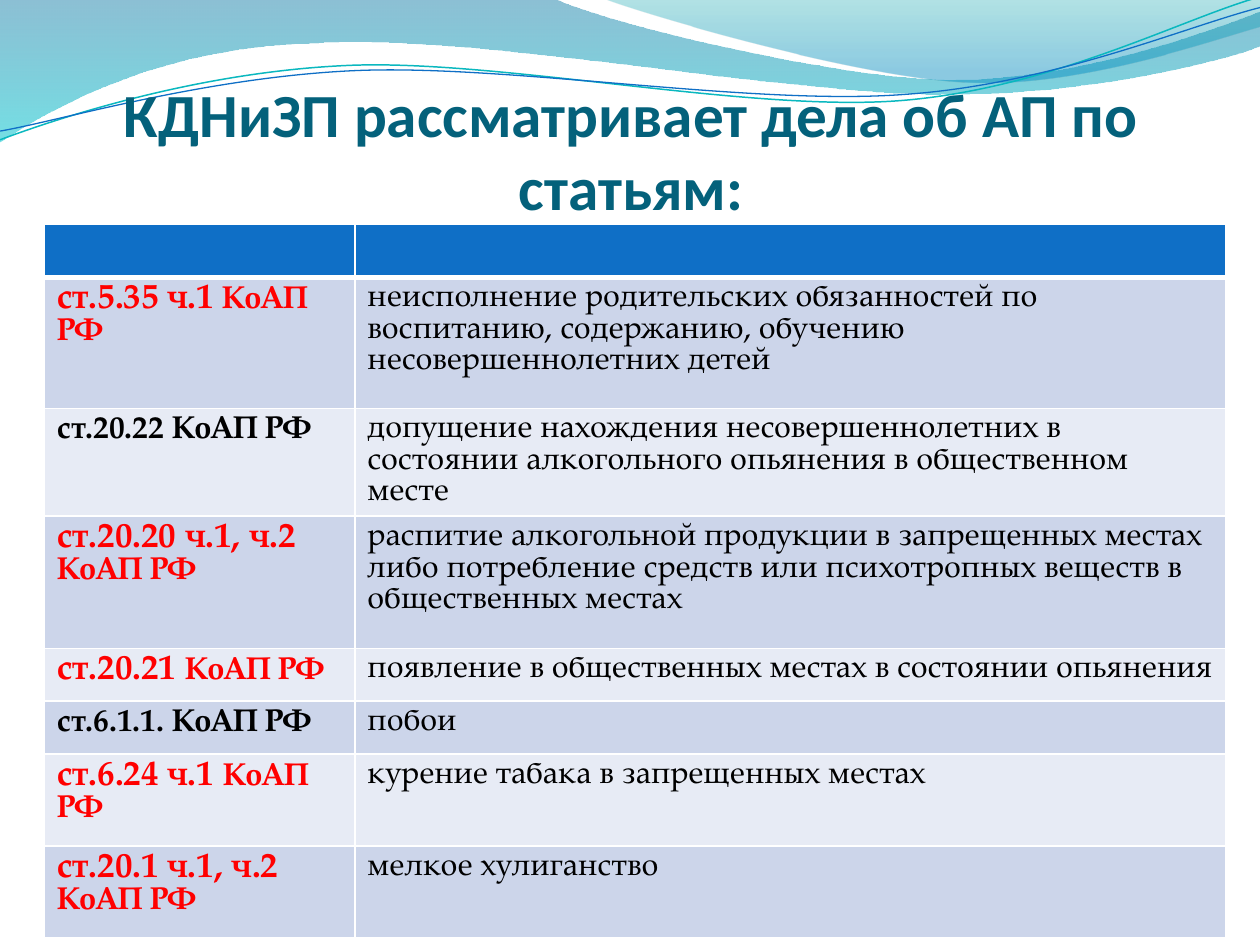
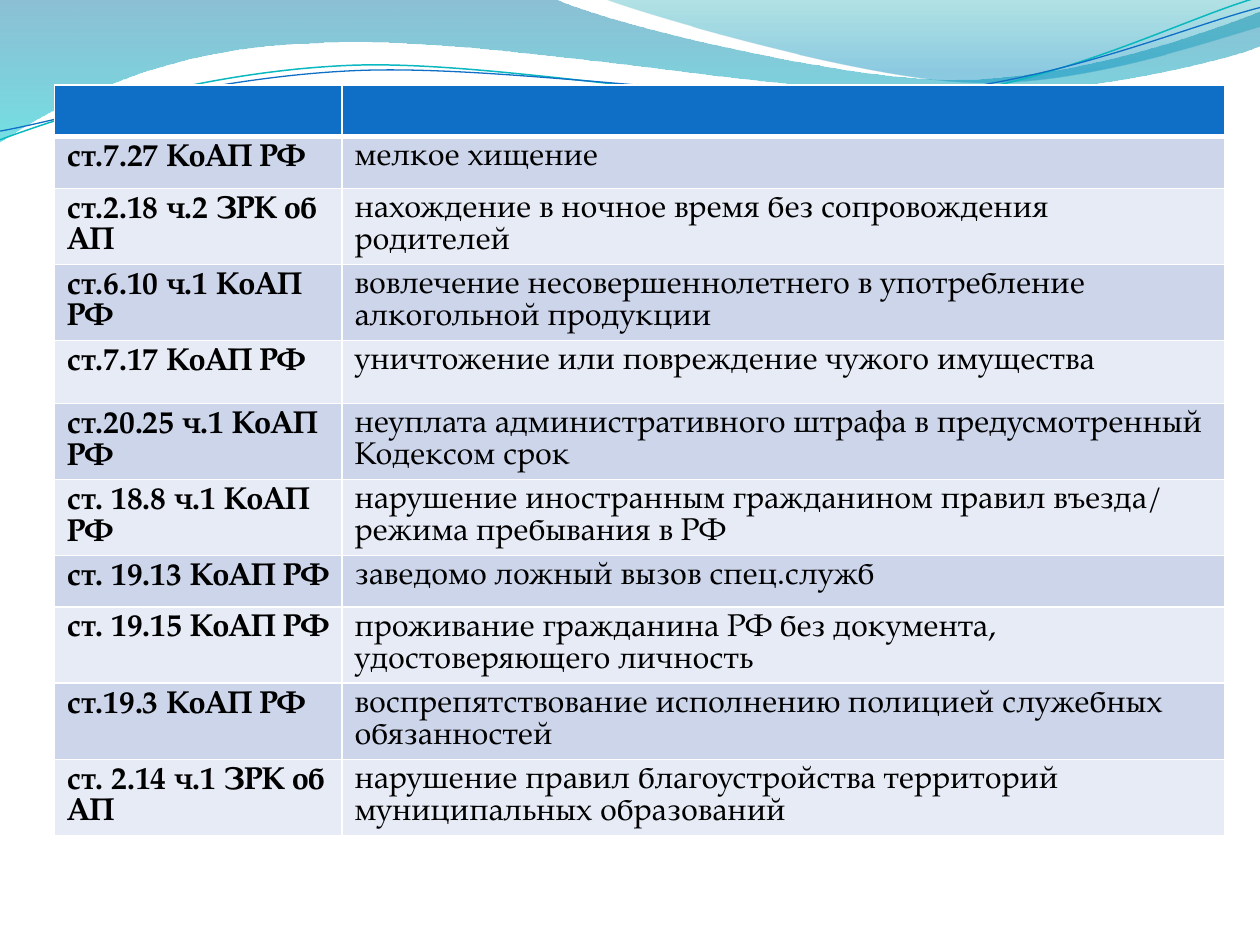
from dataclasses import dataclass

from lxml.etree import SubElement
from pptx import Presentation
from pptx.dml.color import RGBColor as Rgb
from pptx.enum.text import MSO_ANCHOR as Anchor, PP_ALIGN as Align
from pptx.oxml.ns import qn
from pptx.util import Pt


@dataclass(frozen=True)
class Theme:
    title_font: str = "Calibri"
    body_font: str = "TeX Gyre Pagella"
    title_size: float = 35
    body_size: float = 18
    body_leading: float = 18.1
    accent_size: float = 20
    title: str = "04617B"
    text: str = "000000"
    accent: str = "FF0000"
    header: str = "0F6FC6"
    bands: tuple = ("CCD5EA", "E7EBF5")
    border: str = "FFFFFF"


THEME = Theme()

# Outlines in points: a pair is a straight step, six numbers a Bezier curve
WIDE_WAVE = [
    (0, 0), (316.8, -0.7),
    (342.7, 12.2, 478.1, 45.4, 545.8, 45.4),
    (614.2, 45.4, 689.8, 18.7, 720, 6.5),
    (720.7, 25.9),
    (709.2, 31.7, 626.4, 54.7, 537.1, 54),
    (447.8, 54, 275, 20.2, 185, 24.5),
    (92.9, 25.9, 33.1, 59.8, -0.7, 81.4),
]
RIGHT_WAVE = [
    (344.9, -0.7),
    (366.5, 7.9, 491, 44.6, 553.7, 46.8),
    (616.3, 49.7, 691.9, 23, 720, 15.1),
    (720, 0),
]
TEAL_LINE = [
    (0, 79.9),
    (34.6, 67, 113.8, 41, 199.4, 37.4),
    (284.4, 33.8, 427, 64.1, 513.4, 57.6),
    (599.8, 51.1, 675.4, 10.8, 718.6, -1.4),
]
BLUE_LINE = [
    (0, 74.9),
    (33.8, 69.1, 118.1, 43.9, 203.8, 40.3),
    (290.2, 36.7, 429.8, 60.5, 516.2, 54),
    (601.9, 48.2, 677.5, 15.1, 720, 4.3),
]
# Each gradient stop: position, colour, opacity in percent
WAVES = [
    (WIDE_WAVE, [(0, "0074A1", 45), (1, "00C6CF", 55)]),
    (RIGHT_WAVE, [(0, "00A1A9", 30), (0.8, "008BBF", 45)]),
]
WAVE_LINES = [(TEAL_LINE, "0AB8BF", 0.85), (BLUE_LINE, "0F6FC6", 0.75)]

# Rows: height, article, offence; an article in two parts is highlighted
COURT_ROWS = [
    (74.9, ("ст.5.35 ч.1", " КоАП РФ"),
     "неисполнение родительских обязанностей по воспитанию, содержанию, "
     "обучению несовершеннолетних детей"),
    (52.6, ("ст.20.22 КоАП РФ",),
     "допущение нахождения несовершеннолетних в состоянии алкогольного "
     "опьянения в общественном месте"),
    (75.6, ("ст.20.20 ч.1, ч.2 ", "КоАП РФ"),
     "распитие алкогольной продукции в запрещенных местах либо потребление "
     "средств или психотропных веществ в общественных местах"),
    (30.2, ("ст.20.21 ", "КоАП РФ"),
     "появление в общественных местах в состоянии опьянения"),
    (30.2, ("ст.6.1.1. КоАП РФ",), "побои"),
    (52.6, ("ст.6.24 ч.1 ", "КоАП РФ"), "курение табака в запрещенных местах"),
    (52.6, ("ст.20.1 ч.1, ч.2 ", "КоАП РФ"), "мелкое хулиганство"),
]
MORE_ROWS = [
    (29.5, ("ст.7.27 КоАП РФ",), "мелкое хищение"),
    (29.5, ("ст.2.18 ч.2 ЗРК об АП",),
     "нахождение в ночное время без сопровождения родителей"),
    (29.5, ("ст.6.10 ч.1 КоАП РФ",),
     "вовлечение несовершеннолетнего в употребление алкогольной продукции"),
    (36, ("ст.7.17 КоАП РФ",), "уничтожение или повреждение чужого имущества"),
    (41, ("ст.20.25 ч.1 КоАП РФ",),
     "неуплата административного штрафа в предусмотренный Кодексом срок"),
    (29.5, ("ст. 18.8 ч.1 КоАП РФ",),
     "нарушение иностранным гражданином правил въезда/ режима пребывания в РФ"),
    (29.5, ("ст. 19.13 КоАП РФ",), "заведомо ложный вызов спец.служб"),
    (33.8, ("ст. 19.15 КоАП РФ",),
     "проживание гражданина РФ без документа, удостоверяющего личность"),
    (29.5, ("ст.19.3 КоАП РФ",),
     "воспрепятствование исполнению полицией служебных обязанностей"),
    (29.5, ("ст. 2.14 ч.1 ЗРК об АП",),
     "нарушение правил благоустройства территорий муниципальных образований"),
]


def bend(shape, outline):
    """Merge each three straight steps that stand for a curve into a Bezier."""
    steps = iter(list(shape.element.iter(qn("a:lnTo"))))
    for part in outline[1:]:
        step = next(steps)
        if len(part) == 6:
            step.tag = qn("a:cubicBezTo")
            for _ in range(2):
                extra = next(steps)
                step.append(extra[0])
                extra.getparent().remove(extra)


def add_outline(page, outline, close):
    start, *others = [(Pt(part[i]), Pt(part[i + 1]))
                      for part in outline for i in range(0, len(part), 2)]
    builder = page.shapes.build_freeform(*start)
    builder.add_line_segments(others, close=close)
    shape = builder.convert_to_shape()
    shape.shadow.inherit = False
    bend(shape, outline)
    return shape


def add_wave(page, outline, stops):
    wave = add_outline(page, outline, close=True)
    wave.line.fill.background()
    wave.fill.gradient()
    wave.fill.gradient_angle = 270
    for stop, (position, colour, _) in zip(wave.fill.gradient_stops, stops):
        stop.position = position
        stop.color.rgb = Rgb.from_string(colour)
    for colour_node, (_, _, opacity) in zip(wave.element.iter(qn("a:srgbClr")), stops):
        SubElement(colour_node, qn("a:alpha"), val=str(opacity * 1000))


def add_wave_line(page, outline, colour, width):
    curve = add_outline(page, outline, close=False)
    curve.fill.background()
    curve.line.color.rgb = Rgb.from_string(colour)
    curve.line.width = Pt(width)


def style(span, font, size, colour, bold):
    span.font.name = font
    span.font.size = Pt(size)
    span.font.color.rgb = Rgb.from_string(colour)
    span.font.bold = bold


def add_title(page, text):
    box = page.shapes.add_textbox(Pt(36.7), Pt(60.5), Pt(648), Pt(67))
    frame = box.text_frame
    frame.word_wrap = True
    frame.vertical_anchor = Anchor.BOTTOM
    frame.margin_left = frame.margin_right = frame.margin_bottom = 0
    frame.text = text
    para = frame.paragraphs[0]
    para.alignment = Align.CENTER
    style(para.runs[0], THEME.title_font, THEME.title_size, THEME.title, True)


def set_borders(cell, top, bottom):
    properties = cell._tc.get_or_add_tcPr()
    for place, (side, width) in enumerate(zip("LRTB", (1, 1, top, bottom))):
        line = SubElement(properties, qn(f"a:ln{side}"), w=str(Pt(width)))
        fill = SubElement(line, qn("a:solidFill"))
        SubElement(fill, qn("a:srgbClr"), val=THEME.border)
        properties.insert(place, line)


def paint(cell, colour, top=1, bottom=1):
    cell.fill.solid()
    cell.fill.fore_color.rgb = Rgb.from_string(colour)
    set_borders(cell, top, bottom)


def write_cell(cell, parts, bold):
    highlighted = len(parts) > 1
    para = cell.text_frame.paragraphs[0]
    if highlighted:
        cell.margin_bottom = Pt(2)
    else:
        para.line_spacing = Pt(THEME.body_leading)
    for index, text in enumerate(parts):
        span = para.add_run()
        span.text = text
        size = THEME.accent_size if highlighted and index == 0 else THEME.body_size
        style(span, THEME.body_font, size,
              THEME.accent if highlighted else THEME.text, bold)


def add_article_table(page, left, top, widths, header_height, rows):
    heights = [header_height] + [height for height, _, _ in rows]
    table = page.shapes.add_table(len(heights), 2, Pt(left), Pt(top),
                                  Pt(sum(widths)), Pt(sum(heights))).table
    table.horz_banding = False
    for column, width in zip(table.columns, widths):
        column.width = Pt(width)
    for row, height in zip(table.rows, heights):
        row.height = Pt(height)
    for cell in table.rows[0].cells:
        paint(cell, THEME.header, bottom=3)
    for index, (_, article, offence) in enumerate(rows):
        cells = table.rows[index + 1].cells
        for cell, parts, bold in zip(cells, (article, (offence,)), (True, False)):
            write_cell(cell, parts, bold)
            paint(cell, THEME.bands[index % 2], top=1 if index else 3)


def add_page(deck):
    """Add a blank page with the shared wave band."""
    page = deck.slides.add_slide(deck.slide_layouts[6])
    for outline, stops in WAVES:
        add_wave(page, outline, stops)
    for outline, colour, width in WAVE_LINES:
        add_wave_line(page, outline, colour, width)
    return page


def main():
    deck = Presentation()
    deck.slide_width, deck.slide_height = Pt(720), Pt(540)

    # Articles considered by the commission
    page = add_page(deck)
    add_title(page, "КДНиЗП рассматривает дела об АП по статьям:")
    add_article_table(page, 25.4, 128.3, (177.4, 497.4), 30.2, COURT_ROWS)

    # Remaining articles
    page = add_page(deck)
    add_article_table(page, 31.2, 48.7, (164.2, 504.2), 29.5, MORE_ROWS)

    deck.save("out.pptx")


if __name__ == "__main__":
    main()
